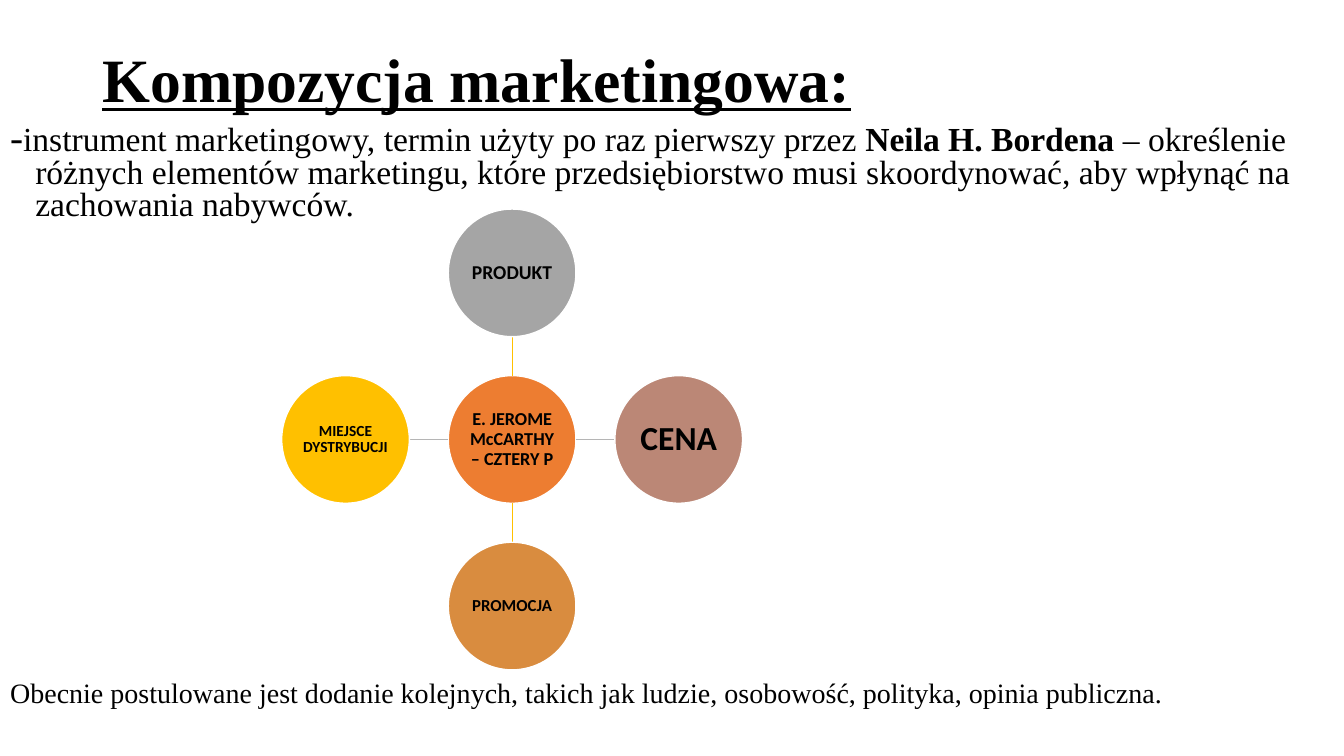
import pptx
import pptx.util
import pptx.dml.color
import pptx.enum.shapes
import pptx.enum.text
import pptx.oxml.ns
import lxml.etree

Pt = pptx.util.Pt
SERIF, SANS = "Times New Roman", "Calibri"
COLORS = {
    "text": "000000", "outline": "FFFFFF", "hub": "ED7D31",
    "product": "A5A5A5", "price": "BB8776", "promotion": "D98C3F",
    "place": "FFC000", "spoke_v": "FFC000", "spoke_h": "B5B5B5",
}


def rgb(name):
    return pptx.dml.color.RGBColor.from_string(COLORS[name])


class SlideBuilder:
    def __init__(self, slide):
        self.slide = slide

    def format_run(self, r, size, font=SERIF, bold=False):
        r.font.size = Pt(size)
        r.font.name = font
        r.font.bold = bold
        r.font.color.rgb = rgb("text")

    def place(self, sp, left, top, width, height):
        sp.left, sp.top, sp.width, sp.height = map(Pt, (left, top, width, height))
        tf = sp.text_frame
        tf.word_wrap = True
        tf.auto_size = pptx.enum.text.MSO_AUTO_SIZE.NONE
        tf.vertical_anchor = pptx.enum.text.MSO_ANCHOR.TOP
        return tf

    def title(self, text, box):
        tf = self.place(self.slide.shapes.title, *box)
        tf.margin_top = Pt(6.7)
        tf.text = text
        p = tf.paragraphs[0]
        p.alignment = pptx.enum.text.PP_ALIGN.LEFT
        p.line_spacing = 0.9
        self.format_run(p.runs[0], 44, bold=True)
        p.runs[0].font.underline = True

    def body(self, paragraphs, box):
        tf = self.place(self.slide.placeholders[1], *box)
        for i, (space, runs) in enumerate(paragraphs):
            p = tf.paragraphs[0] if i == 0 else tf.add_paragraph()
            pPr = p._p.get_or_add_pPr()
            pPr.set("marL", str(Pt(18)))
            pPr.set("indent", str(Pt(-18)))
            lxml.etree.SubElement(pPr, pptx.oxml.ns.qn("a:buNone"))
            p.line_spacing = 0.8
            p.space_before = Pt(space)
            for text, size, bold in runs:
                r = p.add_run()
                r.text = text
                self.format_run(r, size, bold=bold)

    def circle(self, text, cx, cy, diameter, fill, size):
        sp = self.slide.shapes.add_shape(
            pptx.enum.shapes.MSO_SHAPE.OVAL, Pt(cx - diameter / 2),
            Pt(cy - diameter / 2), Pt(diameter), Pt(diameter))
        sp.shadow.inherit = False
        sp.fill.solid()
        sp.fill.fore_color.rgb = rgb(fill)
        sp.line.color.rgb = rgb("outline")
        sp.line.width = Pt(1)
        tf = sp.text_frame
        tf.word_wrap = True
        tf.vertical_anchor = pptx.enum.text.MSO_ANCHOR.MIDDLE
        tf.margin_left = tf.margin_right = tf.margin_top = tf.margin_bottom = Pt(0.7)
        tf.text = text
        p = tf.paragraphs[0]
        p.alignment = pptx.enum.text.PP_ALIGN.CENTER
        p.line_spacing = 0.9
        self.format_run(p.runs[0], size, SANS, True)

    def spoke(self, x1, y1, x2, y2, color):
        cn = self.slide.shapes.add_connector(
            pptx.enum.shapes.MSO_CONNECTOR.STRAIGHT, Pt(x1), Pt(y1), Pt(x2), Pt(y2))
        cn.line.color.rgb = rgb(color)
        cn.line.width = Pt(0.5)
        lxml.etree.SubElement(cn._element.spPr, pptx.oxml.ns.qn("a:effectLst"))


def main():
    prs = pptx.Presentation()
    prs.slide_width, prs.slide_height = Pt(960), Pt(540)
    s = SlideBuilder(prs.slides.add_slide(prs.slide_layouts[1]))

    # Title and text
    s.title("Kompozycja marketingowa:", (66, 28.8, 828, 104.4))
    s.body([
        (0, [("-", 28, False),
             ("instrument marketingowy, termin użyty po raz pierwszy przez ", 24, False),
             ("Neila H. Bordena ", 24, True),
             ("– określenie różnych elementów marketingu, które przedsiębiorstwo "
              "musi skoordynować, aby wpłynąć na zachowania nabywców.", 24, False)]),
        (328, [("Obecnie postulowane jest dodanie kolejnych, takich jak ludzie, "
                "osobowość, polityka, opinia publiczna.", 20, False)]),
    ], (0, 82.8, 960, 457.2))

    # Hub with four satellites, each given by its direction
    cx, cy, diameter, reach = 365.8, 313.9, 91.2, 119
    s.circle("E. JEROME McCARTHY – CZTERY P", cx, cy, diameter, "hub", 13)
    satellites = [
        ("PRODUKT", 0, -1, "product", 14),
        ("CENA", 1, 0, "price", 24),
        ("PROMOCJA", 0, 1, "promotion", 12),
        ("MIEJSCE DYSTRYBUCJI", -1, 0, "place", 11),
    ]
    near, far = diameter / 2, reach - diameter / 2
    for text, dx, dy, fill, size in satellites:
        s.spoke(cx + dx * near, cy + dy * near, cx + dx * far, cy + dy * far,
                "spoke_h" if dx else "spoke_v")
        s.circle(text, cx + dx * reach, cy + dy * reach, diameter, fill, size)

    prs.save("out.pptx")


if __name__ == "__main__":
    main()
